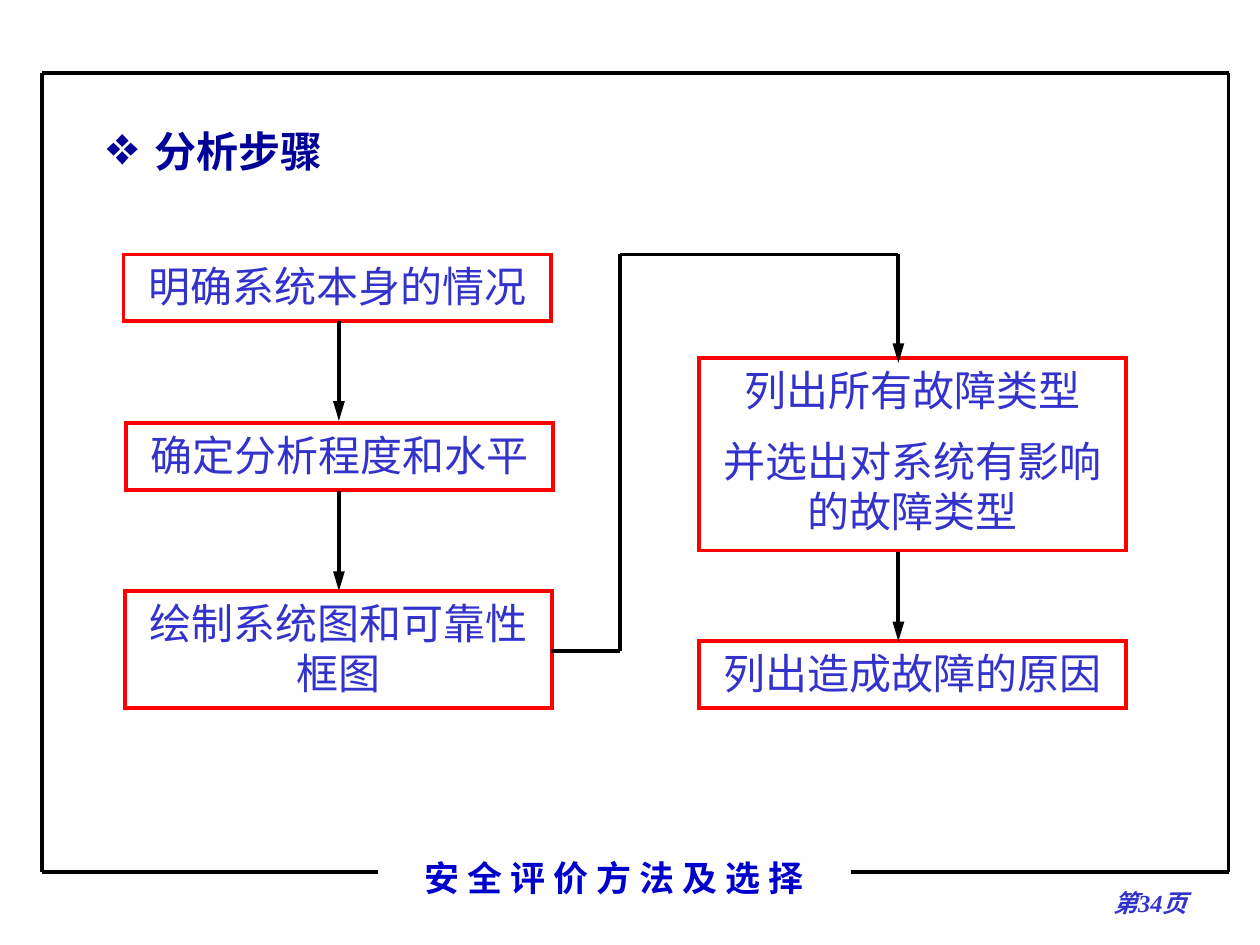
from lxml import etree
from pptx import Presentation
from pptx.dml.color import RGBColor
from pptx.enum.shapes import MSO_CONNECTOR, MSO_SHAPE
from pptx.enum.text import MSO_ANCHOR as ANCHOR, PP_ALIGN as ALIGN
from pptx.oxml.ns import qn
from pptx.util import Inches, Pt

COLORS = {"ink": "000000", "border": "FF0000", "step": "3333CC",
          "heading": "000099", "footer": "0000CC"}
LATIN, CJK = "Times New Roman", "Noto Sans CJK SC"


def write(shape, lines, color, align=ALIGN.CENTER, anchor=ANCHOR.MIDDLE, **font):
    frame = shape.text_frame
    frame.word_wrap = True
    frame.vertical_anchor = anchor
    for index, line in enumerate(lines):
        para = frame.add_paragraph() if index else frame.paragraphs[0]
        para.alignment = align
        para.space_before = Pt(12 if index else 0)
        span = para.add_run()
        span.text = line
        span.font.color.rgb = RGBColor.from_string(COLORS[color])
        for name, value in {"name": LATIN, "size": Pt(24), **font}.items():
            setattr(span.font, name, value)
        latin = span.font._element.find(qn("a:latin"))
        east_asian = etree.Element(qn("a:ea"), typeface=CJK)
        latin.addnext(east_asian)


def draw_line(x1, y1, x2, y2, arrow=False):
    line = page.shapes.add_connector(
        MSO_CONNECTOR.STRAIGHT, Inches(x1), Inches(y1), Inches(x2), Inches(y2))
    line.line.color.rgb = RGBColor.from_string(COLORS["ink"])
    line.line.width = Pt(2.25)
    if arrow:
        etree.SubElement(line.line._get_or_add_ln(), qn("a:tailEnd"),
                         type="triangle", w="med", len="lg")
    etree.SubElement(line._element.spPr, qn("a:effectLst"))


deck = Presentation()
deck.slide_width, deck.slide_height = Inches(10), Inches(7.5)
page = deck.slides.add_slide(deck.slide_layouts[6])

# Frame: overlapping top segments, open at the bottom for the footer
left, top, right, bottom = 0.33, 0.58, 9.75, 6.92
for ends in [(2.83, top, 9.17, top), (left, top, left, bottom),
             (right, top, right, bottom), (left, bottom, 3, bottom),
             (6.75, bottom, right, bottom), (left, top, 7.92, top),
             (9.17, top, right, top)]:
    draw_line(*ends)

# Footer, page number and heading
labels = [
    ((3, 6.75, 3.75, 0.43), "安 全 评 价 方 法 及 选 择", "footer",
     {"size": Pt(20), "bold": True}),
    ((8.67, 7, 0.92, 0.33), "第34页", "step",
     {"size": Pt(14), "bold": True, "italic": True}),
    ((0.75, 0.99, 8.42, 0.46), " 分析步骤", "heading",
     {"name": CJK, "bold": True, "align": ALIGN.LEFT}),
]
for place, text, color, style in labels:
    box = page.shapes.add_textbox(*map(Inches, place))
    write(box, [text], color, **style)

# Heading bullet (the heading is the last label)
heading = box.text_frame.paragraphs[0]
heading.line_spacing = 0.9
properties = heading._p.get_or_add_pPr()
properties.set("marL", str(Inches(0.3)))
properties.set("indent", str(Inches(-0.3)))
etree.SubElement(properties, qn("a:buSzPct"), val="130000")
etree.SubElement(properties, qn("a:buChar"), char="❖")

# Step boxes
steps = [
    (0.98, 2.02, 0.53, ["明确系统本身的情况"]),
    (1, 3.36, 0.53, ["确定分析程度和水平"]),
    (0.99, 4.69, 0.93, ["绘制系统图和可靠性框图"]),
    (5.55, 2.84, 1.53, ["列出所有故障类型", "并选出对系统有影响的故障类型"]),
    (5.55, 5.09, 0.53, ["列出造成故障的原因"]),
]
for x, y, height, lines in steps:
    box = page.shapes.add_shape(
        MSO_SHAPE.RECTANGLE, Inches(x), Inches(y), Inches(3.39), Inches(height))
    box.shadow.inherit = False
    box.fill.background()
    box.line.color.rgb = RGBColor.from_string(COLORS["border"])
    box.line.width = Pt(2.25)
    etree.SubElement(box.line._get_or_add_ln(), qn("a:miter"), lim="800000")
    write(box, lines, "step", anchor=ANCHOR.TOP)

# Arrows down each column
for x, start, end in [(2.69, 2.55, 3.34), (2.69, 3.9, 4.69), (7.13, 4.38, 5.09)]:
    draw_line(x, start, x, end, arrow=True)

# Route from the left column up to the right column
route = [(4.37, 5.17), (4.92, 5.17), (4.92, 2.02), (7.13, 2.02), (7.13, 2.88)]
for start, end in zip(route, route[1:]):
    draw_line(*start, *end, arrow=end == route[-1])

deck.save("out.pptx")
